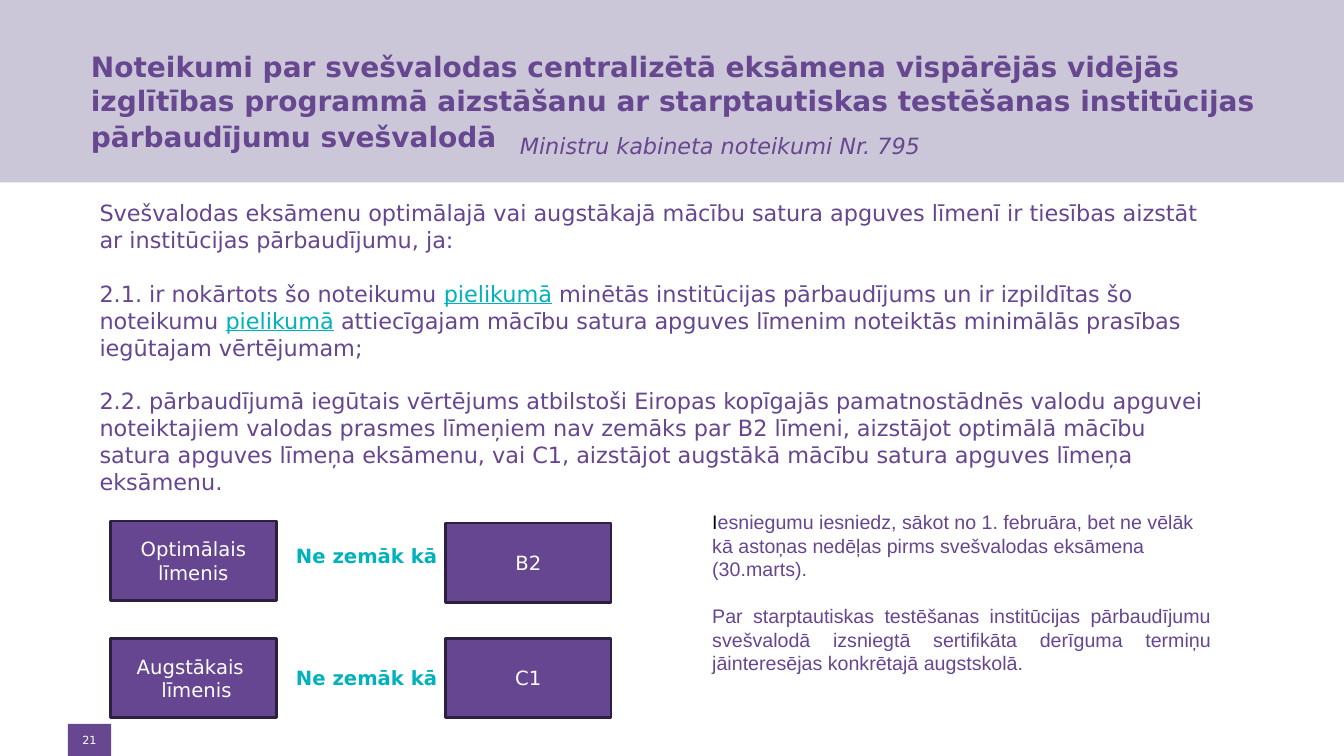
import pptx
import pptx.dml.color
import pptx.enum.shapes
import pptx.enum.text
import pptx.util

Cm = pptx.util.Cm
Pt = pptx.util.Pt
RGBColor = pptx.dml.color.RGBColor
Align = pptx.enum.text.PP_ALIGN
Anchor = pptx.enum.text.MSO_ANCHOR

PURPLE = RGBColor(0x66, 0x47, 0x90)
TEXT_PURPLE = RGBColor(0x66, 0x46, 0x90)
DARK_PURPLE = RGBColor(0x2D, 0x1F, 0x3F)
LAVENDER = RGBColor(0xCB, 0xC7, 0xD8)
TEAL = RGBColor(0x00, 0xB2, 0xBB)
WHITE = RGBColor(0xFF, 0xFF, 0xFF)
BLACK = RGBColor(0x00, 0x00, 0x00)
MAIN_FONT = "DejaVu Sans"
NOTE_FONT = "Arial"

TITLE = (
    "Noteikumi par svešvalodas centralizētā eksāmena vispārējās vidējās izglītības programmā "
    "aizstāšanu ar starptautiskas testēšanas institūcijas pārbaudījumu svešvalodā"
)
SUBTITLE = "Ministru kabineta noteikumi Nr. 795"
PAGE_NUMBER = "21"
LINK = ("pielikumā", {"color": TEAL, "underline": True})
RULES = [
    [("Svešvalodas eksāmenu optimālajā vai augstākajā mācību satura apguves līmenī ir tiesības "
      "aizstāt ar institūcijas pārbaudījumu, ja:", {})],
    [("2.1. ir nokārtots šo noteikumu ", {}),
     LINK,
     (" minētās institūcijas pārbaudījums un ir izpildītas šo noteikumu ", {}),
     LINK,
     (" attiecīgajam mācību satura apguves līmenim noteiktās minimālās prasības "
      "iegūtajam vērtējumam;", {})],
    [("2.2. pārbaudījumā iegūtais vērtējums atbilstoši Eiropas kopīgajās pamatnostādnēs valodu "
      "apguvei noteiktajiem valodas prasmes līmeņiem nav zemāks par B2 līmeni, aizstājot optimālā "
      "mācību satura apguves līmeņa eksāmenu, vai C1, aizstājot augstākā mācību satura apguves "
      "līmeņa eksāmenu.", {})],
]
DEADLINE = [
    [("I", {"color": BLACK}),
     ("esniegumu iesniedz, sākot no 1. februāra, bet ne vēlāk kā astoņas nedēļas pirms "
      "svešvalodas eksāmena (30.marts).", {})],
]
CERTIFICATE = [
    [("Par starptautiskas testēšanas institūcijas pārbaudījumu svešvalodā izsniegtā sertifikāta "
      "derīguma termiņu jāinteresējas konkrētajā augstskolā.", {})],
]
CONDITION = "Ne zemāk kā"
LEVELS = [
    (["Optimālais līmenis"], 13.13, "B2", 13.18, 13.59),
    (["Augstākais ", " līmenis"], 16.08, "C1", 16.08, 16.66),
]
LEVEL_LEFT, CONDITION_LEFT, GRADE_LEFT = 2.79, 7.21, 11.23
BOX_WIDTH, BOX_HEIGHT = 4.17, 2.01


def add_run(paragraph, text, size, color, font=MAIN_FONT, bold=False, italic=False, underline=False):
    """Add one formatted run to a paragraph."""
    run = paragraph.add_run()
    run.text = text
    run.font.name = font
    run.font.size = Pt(size)
    run.font.color.rgb = color
    run.font.bold = bold
    run.font.italic = italic
    run.font.underline = underline


def fill_frame(frame, paragraphs, size, color, gap=0, alignments=(), **style):
    """Write paragraphs of runs into a text frame, with a gap between them."""
    frame.word_wrap = True
    for index, runs in enumerate(paragraphs):
        paragraph = frame.add_paragraph() if index else frame.paragraphs[0]
        if index:
            paragraph.space_before = Pt(gap)
        paragraph.alignment = alignments[index] if alignments else Align.LEFT
        for text, changes in runs:
            add_run(paragraph, text, size, **{"color": color, **style, **changes})


def add_text(slide, left, top, width, height, paragraphs, size, color, **style):
    """Add a wrapping text box."""
    box = slide.shapes.add_textbox(Cm(left), Cm(top), Cm(width), Cm(height))
    fill_frame(box.text_frame, paragraphs, size, color, **style)


def add_rectangle(slide, left, top, width, height, fill, lines=(), size=14, outline=None):
    """Add a filled rectangle with centred white lines of text."""
    rectangle = slide.shapes.add_shape(
        pptx.enum.shapes.MSO_SHAPE.RECTANGLE, Cm(left), Cm(top), Cm(width), Cm(height))
    rectangle.shadow.inherit = False
    rectangle.fill.solid()
    rectangle.fill.fore_color.rgb = fill
    if outline is None:
        rectangle.line.fill.background()
    else:
        rectangle.line.color.rgb = outline
        rectangle.line.width = Pt(2)
    rectangle.text_frame.vertical_anchor = Anchor.MIDDLE
    fill_frame(rectangle.text_frame, [[(line, {})] for line in lines], size, WHITE,
               alignments=[Align.CENTER] * len(lines))
    return rectangle


def add_title(slide):
    """Place the title over its band."""
    title = slide.shapes.title
    band = add_rectangle(slide, 0, 0, 33.87, 4.6, LAVENDER)
    title._element.addprevious(band._element)
    title.left, title.top, title.width, title.height = Cm(2.29), Cm(0.97), Cm(29.72), Cm(3.18)
    frame = title.text_frame
    frame.auto_size = pptx.enum.text.MSO_AUTO_SIZE.NONE
    frame.vertical_anchor = Anchor.MIDDLE
    frame.margin_left = 0
    fill_frame(frame, [[(TITLE, {"bold": True})]], 20, PURPLE)
    add_run(frame.paragraphs[0], " ", 22, PURPLE)


def main():
    """Build the slide and save it."""
    presentation = pptx.Presentation()
    presentation.slide_width, presentation.slide_height = Cm(33.87), Cm(19.05)
    slide = presentation.slides.add_slide(presentation.slide_layouts[5])
    add_title(slide)

    badge = add_rectangle(slide, 1.71, 18.24, 1.09, 0.81, PURPLE, [PAGE_NUMBER], 8)
    frame = badge.text_frame
    frame.margin_left = frame.margin_right = frame.margin_top = frame.margin_bottom = Cm(0.1)

    add_text(slide, 2.26, 4.9, 28.58, 7.77, RULES, 16, TEXT_PURPLE, gap=19.2)
    for level, level_top, grade, grade_top, condition_top in LEVELS:
        for left, top, lines in ((LEVEL_LEFT, level_top, level), (GRADE_LEFT, grade_top, [grade])):
            add_rectangle(slide, left, top, BOX_WIDTH, BOX_HEIGHT, TEXT_PURPLE, lines,
                          outline=DARK_PURPLE)
        add_text(slide, CONDITION_LEFT, condition_top, 4.55, 0.86, [[(CONDITION, {})]], 14, TEAL,
                 bold=True)
    add_text(slide, 12.85, 3.2, 19.53, 0.94, [[(SUBTITLE, {})]], 16, PURPLE, italic=True)
    add_text(slide, 17.7, 12.73, 13.08, 4.45, DEADLINE + CERTIFICATE, 14, TEXT_PURPLE,
             gap=16.8, alignments=(Align.LEFT, Align.JUSTIFY), font=NOTE_FONT)
    presentation.save("out.pptx")


if __name__ == "__main__":
    main()
